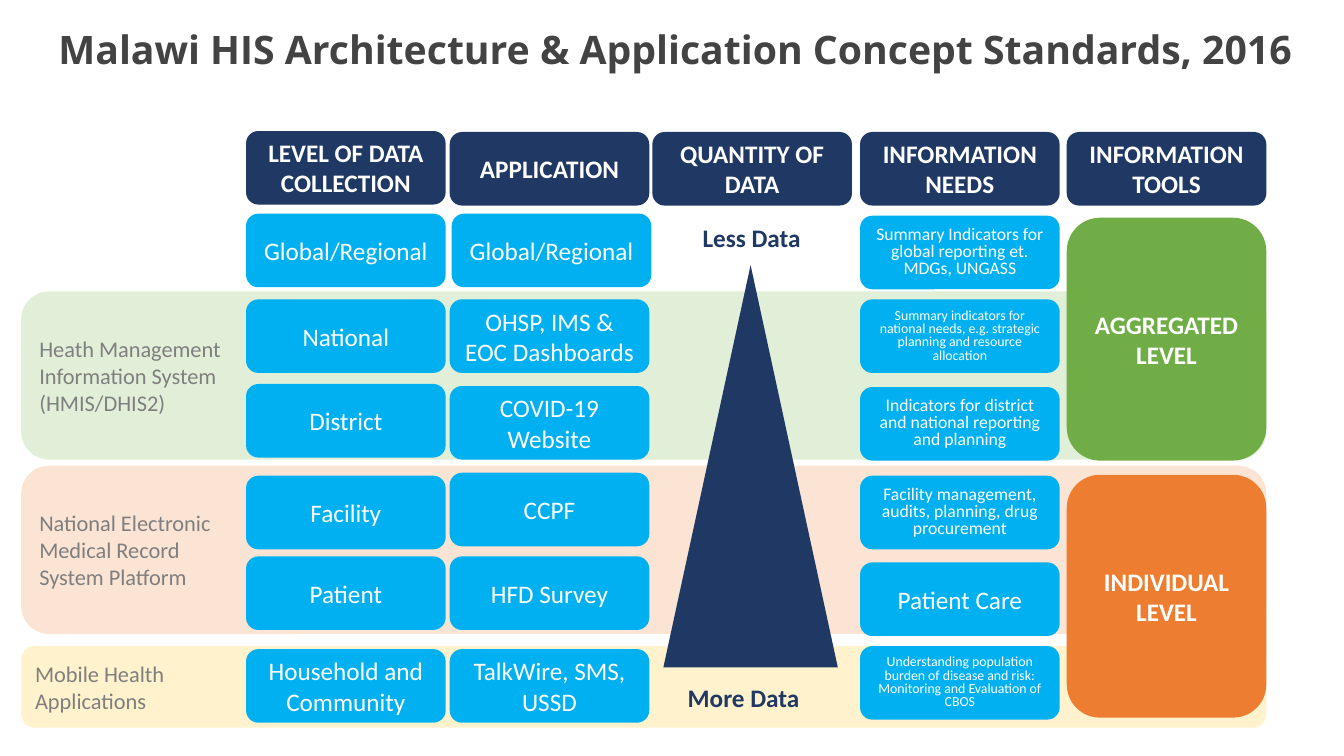
from pptx import Presentation
from pptx.dml.color import RGBColor
from pptx.enum.shapes import MSO_SHAPE
from pptx.enum.text import MSO_ANCHOR, MSO_AUTO_SIZE, PP_ALIGN
from pptx.util import Inches, Pt

NAVY = RGBColor(0x1F, 0x38, 0x64)
BLUE = RGBColor(0x00, 0xB0, 0xF0)
GREEN = RGBColor(0x70, 0xAD, 0x47)
ORANGE = RGBColor(0xED, 0x7D, 0x31)
PALE_GREEN = RGBColor(0xE1, 0xEF, 0xD8)
PALE_ORANGE = RGBColor(0xFB, 0xE4, 0xD4)
PALE_YELLOW = RGBColor(0xFF, 0xF2, 0xCC)
WHITE = RGBColor(0xFF, 0xFF, 0xFF)
GRAY = RGBColor(0x7F, 0x7F, 0x7F)
CHARCOAL = RGBColor(0x43, 0x43, 0x43)

CELL_WIDTH, CELL_HEIGHT = 1.98, 0.73
LEVEL_X, APPLICATION_X, QUANTITY_X, NEEDS_X, TOOLS_X = 2.44, 4.46, 6.47, 8.53, 10.58


class ArchitectureSlide:
    body_font = "Calibri"
    title_font = "Open Sans"

    def __init__(self, presentation):
        self.slide = presentation.slides.add_slide(presentation.slide_layouts[5])

    def add_lines(self, frame, lines, size, color, bold=False, font=None,
                  align=PP_ALIGN.CENTER, anchor=MSO_ANCHOR.MIDDLE, spacing=None):
        frame.word_wrap = True
        frame.auto_size = MSO_AUTO_SIZE.NONE
        frame.vertical_anchor = anchor
        for index, line in enumerate(lines):
            paragraph = frame.add_paragraph() if index else frame.paragraphs[0]
            paragraph.alignment = align
            if spacing:
                paragraph.line_spacing = spacing
            run = paragraph.add_run()
            run.text = line
            run.font.name = font or self.body_font
            run.font.size = Pt(size)
            run.font.bold = bold
            run.font.color.rgb = color

    def title(self, text):
        title = self.slide.shapes.title
        title.left, title.top = Inches(0.48), Inches(0.15)
        title.width, title.height = Inches(12.85), Inches(0.67)
        self.add_lines(title.text_frame, [text], 28, CHARCOAL, bold=True,
                       font=self.title_font, align=PP_ALIGN.LEFT)

    def shape(self, preset, x, y, width, height, fill):
        shape = self.slide.shapes.add_shape(
            preset, Inches(x), Inches(y), Inches(width), Inches(height))
        shape.shadow.inherit = False
        shape.fill.solid()
        shape.fill.fore_color.rgb = fill
        shape.line.fill.background()
        return shape

    def band(self, y, height, fill, lines):
        band = self.shape(MSO_SHAPE.ROUNDED_RECTANGLE, 0.21, y, 12.35, height, fill)
        self.add_lines(band.text_frame, lines, 16, GRAY, align=PP_ALIGN.LEFT)

    def cell(self, x, y, text, fill=BLUE, height=CELL_HEIGHT, size=18,
             bold=False, spacing=None):
        cell = self.shape(MSO_SHAPE.ROUNDED_RECTANGLE, x, y, CELL_WIDTH, height, fill)
        self.add_lines(cell.text_frame, [text], size, WHITE, bold=bold, spacing=spacing)

    def caption(self, x, y, text):
        caption = self.slide.shapes.add_textbox(
            Inches(x), Inches(y), Inches(1.43), Inches(0.4))
        self.add_lines(caption.text_frame, [text], 18, NAVY, bold=True,
                       anchor=MSO_ANCHOR.TOP)


BANDS = [
    (2.89, 1.67, PALE_GREEN,
     ["Heath Management", "Information System", "(HMIS/DHIS2)"]),
    (4.62, 1.67, PALE_ORANGE,
     ["National Electronic", "Medical Record", "System Platform"]),
    (6.41, 0.81, PALE_YELLOW, ["Mobile Health", "Applications"]),
]
HEADERS = [
    (LEVEL_X, 1.3, "LEVEL OF DATA COLLECTION"),
    (APPLICATION_X, 1.31, "APPLICATION"),
    (QUANTITY_X, 1.31, "QUANTITY OF DATA"),
    (NEEDS_X, 1.31, "INFORMATION NEEDS"),
    (TOOLS_X, 1.31, "INFORMATION TOOLS"),
]
LEVELS = [
    (2.12, "Global/Regional"),
    (2.97, "National"),
    (3.81, "District"),
    (4.72, "Facility"),
    (5.52, "Patient"),
    (6.44, "Household and Community"),
]
APPLICATIONS = [
    (APPLICATION_X + 0.02, 2.12, "Global/Regional"),
    (APPLICATION_X, 2.97, "OHSP, IMS & EOC Dashboards"),
    (APPLICATION_X, 3.83, "COVID-19 Website"),
    (APPLICATION_X, 4.69, "CCPF"),
    (APPLICATION_X, 5.52, "HFD Survey"),
    (APPLICATION_X, 6.44, "TalkWire, SMS, USSD"),
]
NEEDS = [
    (2.14, 12.6, 0.8, "Summary Indicators for global reporting et. MDGs, UNGASS"),
    (2.97, 9.9, 0.8, "Summary indicators for national needs, e.g. strategic "
                     "planning and resource allocation"),
    (3.84, 12.6, 0.8, "Indicators for district and national reporting and planning"),
    (4.72, 12.6, 0.8, "Facility management, audits, planning, drug procurement"),
    (5.58, 18, None, "Patient Care"),
    (6.41, 9.9, 0.8, "Understanding population burden of disease and risk: "
                     "Monitoring and Evaluation of CBOS"),
]
TOOLS = [(2.16, "AGGREGATED LEVEL", GREEN), (4.71, "INDIVIDUAL LEVEL", ORANGE)]


def main():
    presentation = Presentation()
    presentation.slide_width = Inches(13.33)
    presentation.slide_height = Inches(7.5)
    architecture = ArchitectureSlide(presentation)

    architecture.title("Malawi HIS Architecture & Application Concept Standards, 2016")
    for y, height, fill, lines in BANDS:
        architecture.band(y, height, fill, lines)
    for x, y, heading in HEADERS:
        architecture.cell(x, y, heading, fill=NAVY, bold=True)
    for y, level in LEVELS:
        architecture.cell(LEVEL_X, y, level)
    for x, y, application in APPLICATIONS:
        architecture.cell(x, y, application)
    for y, size, spacing, need in NEEDS:
        architecture.cell(NEEDS_X, y, need, size=size, spacing=spacing)
    for y, tool, fill in TOOLS:
        architecture.cell(TOOLS_X, y, tool, fill=fill, height=2.41, bold=True)

    architecture.shape(MSO_SHAPE.ISOSCELES_TRIANGLE, 6.58, 2.63, 1.73, 3.99, NAVY)
    architecture.caption(6.74, 2.16, "Less Data")
    architecture.caption(6.66, 6.72, "More Data")

    presentation.save("out.pptx")


if __name__ == "__main__":
    main()
